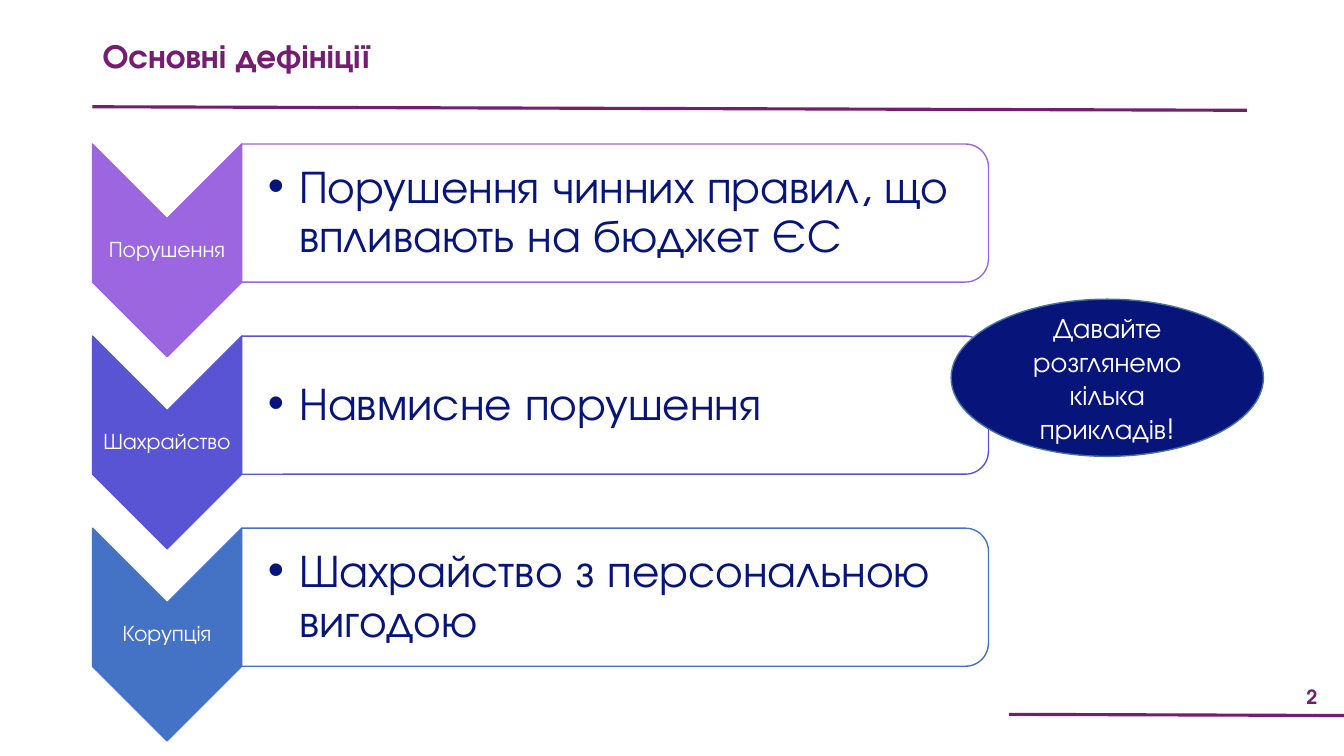
from lxml.etree import SubElement
from pptx import Presentation
from pptx.dml.color import RGBColor
from pptx.enum.shapes import MSO_CONNECTOR, MSO_SHAPE
from pptx.enum.text import MSO_ANCHOR, MSO_AUTO_SIZE, PP_ALIGN
from pptx.oxml.ns import qn
from pptx.util import Cm, Pt

PLUM = RGBColor(0x75, 0x1D, 0x70)
NAVY = RGBColor(0x07, 0x14, 0x7A)
STEEL = RGBColor(0x43, 0x73, 0x9E)
WHITE = RGBColor(0xFF, 0xFF, 0xFF)
VIOLET = RGBColor(0x9B, 0x66, 0xE0)
INDIGO = RGBColor(0x59, 0x54, 0xD3)
BLUE = RGBColor(0x44, 0x72, 0xC4)

DEFINITIONS = [
    ("Порушення", "Порушення чинних правил, що впливають на бюджет ЄС", VIOLET),
    ("Шахрайство", "Навмисне порушення", INDIGO),
    ("Корупція", "Шахрайство з персональною вигодою", BLUE),
]
FIRST_ROW, ROW_STEP = 3.63, 4.84


class SlideBuilder:
    font = "TeX Gyre Adventor"

    def __init__(self, slide):
        self.slide = slide

    def fill_text(self, tf, text, size, color, align, bold=False, spacing=1.0):
        tf.word_wrap = True
        tf.auto_size = MSO_AUTO_SIZE.NONE
        p = tf.paragraphs[0]
        p.alignment = align
        p.line_spacing = spacing
        r = p.add_run()
        r.text = text
        r.font.name = self.font
        r.font.size = Pt(size)
        r.font.bold = bold
        r.font.color.rgb = color
        return p

    def title(self, text, x, y, w, h):
        sp = self.slide.shapes.title
        sp.left, sp.top, sp.width, sp.height = Cm(x), Cm(y), Cm(w), Cm(h)
        sp.text_frame.vertical_anchor = MSO_ANCHOR.TOP
        self.fill_text(sp.text_frame, text, 24, PLUM, PP_ALIGN.JUSTIFY, True, 0.9)

    def rule(self, x1, y1, x2, y2):
        line = self.slide.shapes.add_connector(
            MSO_CONNECTOR.STRAIGHT, Cm(x1), Cm(y1), Cm(x2), Cm(y2))
        line.line.color.rgb = PLUM
        line.line.width = Pt(2.25)
        SubElement(line._element.spPr, qn("a:effectLst"))

    def shape(self, kind, x, y, w, h, fill, line, rotation=0):
        sp = self.slide.shapes.add_shape(kind, Cm(x), Cm(y), Cm(w), Cm(h))
        sp.rotation = rotation
        sp.shadow.inherit = False
        sp.fill.solid()
        sp.fill.fore_color.rgb = fill
        sp.line.color.rgb = line
        sp.line.width = Pt(1)
        return sp

    def turned_shape(self, kind, x, y, w, h, fill, line):
        """Place a shape turned by 90° so that it covers the given box."""
        return self.shape(kind, x + (w - h) / 2, y + (h - w) / 2, h, w, fill, line, 90)

    def text(self, text, x, y, w, h, size, color, align=PP_ALIGN.CENTER,
             bold=False, spacing=1.0, inset=0.03, left_inset=None):
        tf = self.slide.shapes.add_textbox(Cm(x), Cm(y), Cm(w), Cm(h)).text_frame
        tf.vertical_anchor = MSO_ANCHOR.MIDDLE
        tf.margin_left = Cm(inset if left_inset is None else left_inset)
        tf.margin_right = tf.margin_top = tf.margin_bottom = Cm(inset)
        return self.fill_text(tf, text, size, color, align, bold, spacing)

    def bullet(self, text, x, y, w, h):
        p = self.text(text, x, y, w, h, 33, NAVY, PP_ALIGN.LEFT,
                      spacing=0.9, inset=0.05, left_inset=0.66)
        pPr = p._p.get_or_add_pPr()
        pPr.set("marL", str(Cm(0.79)))
        pPr.set("indent", str(-Cm(0.79)))
        SubElement(pPr, qn("a:buFont"), typeface="Arial")
        SubElement(pPr, qn("a:buChar"), char="•")

    def definition(self, term, meaning, color, y):
        self.turned_shape(MSO_SHAPE.CHEVRON, 2.33, y, 3.76, 5.36, color, color)
        self.text(term, 2.33, y + 1.88, 3.76, 1.6, 16, WHITE, spacing=0.9)
        panel = self.turned_shape(MSO_SHAPE.ROUND_2_SAME_RECTANGLE,
                                  6.09, y, 18.82, 3.48, WHITE, color)
        rgb = panel._element.spPr.find(qn("a:solidFill")).find(qn("a:srgbClr"))
        SubElement(rgb, qn("a:alpha"), val="90000")
        self.bullet(meaning, 6.09, y + 0.17, 18.64, 3.14)

    def callout(self, text, x, y, w, h):
        sp = self.shape(MSO_SHAPE.OVAL, x, y, w, h, NAVY, STEEL)
        sp.text_frame.vertical_anchor = MSO_ANCHOR.MIDDLE
        self.fill_text(sp.text_frame, text, 20, WHITE, PP_ALIGN.CENTER)


def main():
    prs = Presentation()
    prs.slide_width, prs.slide_height = Cm(33.87), Cm(19.05)
    s = SlideBuilder(prs.slides.add_slide(prs.slide_layouts[5]))
    s.title("Основні дефініції", 2.33, 0.86, 24.71, 1.65)
    s.rule(2.33, 2.69, 31.42, 2.78)
    s.rule(25.43, 18.0, 33.87, 18.03)
    s.text("2", 32.26, 17.09, 1.6, 0.91, 14, PLUM, bold=True)
    for i, (term, meaning, color) in enumerate(DEFINITIONS):
        s.definition(term, meaning, color, FIRST_ROW + i * ROW_STEP)
    s.callout("Давайте розглянемо кілька прикладів!", 23.97, 7.54, 7.87, 3.96)
    prs.save("out.pptx")


if __name__ == "__main__":
    main()
